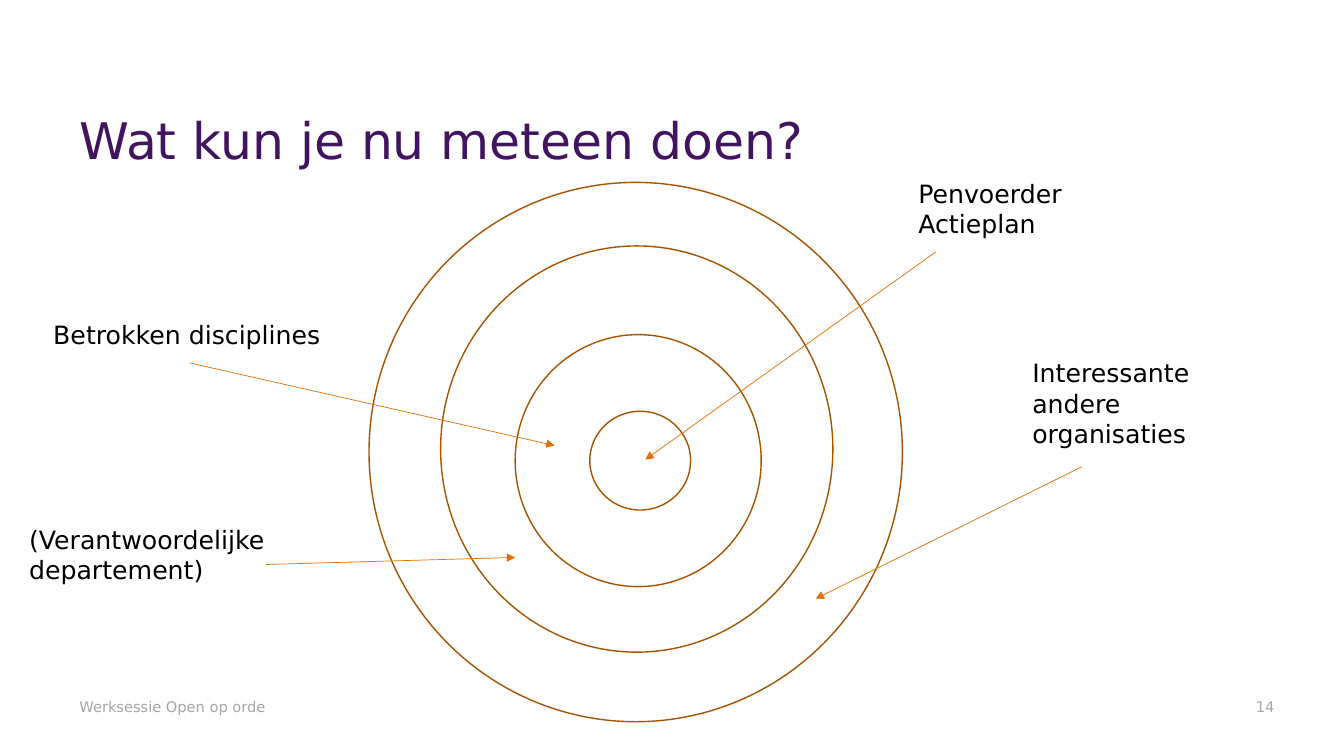
"""Build the slide with four circles of people and organisations to involve."""
from dataclasses import dataclass

from lxml import etree
from pptx import Presentation
from pptx.dml.color import RGBColor
from pptx.enum.shapes import MSO_CONNECTOR as Connector, MSO_SHAPE as Shape
from pptx.enum.text import MSO_ANCHOR as Anchor, PP_ALIGN as Align
from pptx.oxml.ns import qn
from pptx.util import Inches, Pt


@dataclass(frozen=True)
class Theme:
    font: str = "DejaVu Sans"
    title: RGBColor = RGBColor(0x42, 0x14, 0x5F)
    text: RGBColor = RGBColor(0, 0, 0)
    footer: RGBColor = RGBColor(0xA6, 0xA6, 0xA6)
    circle: RGBColor = RGBColor(0xA6, 0x53, 0x00)
    arrow: RGBColor = RGBColor(0xE1, 0x70, 0x00)
    title_size: float = 36
    label_size: float = 18
    footer_size: float = 10.5


theme = Theme()


def add_text(slide, box, text, size, color, anchor=Anchor.TOP):
    shape = slide.shapes.add_textbox(*map(Inches, box))
    frame = shape.text_frame
    frame.word_wrap = True
    frame.vertical_anchor = anchor
    run = frame.paragraphs[0].add_run()
    run.text = text
    run.font.name = theme.font
    run.font.size = Pt(size)
    run.font.color.rgb = color
    return frame


presentation = Presentation()
presentation.slide_width = Inches(13.33)
presentation.slide_height = Inches(7.5)
slide = presentation.slides.add_slide(presentation.slide_layouts[6])

title = add_text(slide, (0.69, 0.7, 11.95, 1.04), "Wat kun je nu meteen doen?",
                 theme.title_size, theme.title, Anchor.BOTTOM)
title.paragraphs[0].line_spacing = 0.9

add_text(slide, (0.69, 6.8, 5.47, 0.35), "Werksessie Open op orde",
         theme.footer_size, theme.footer, Anchor.BOTTOM)
number = add_text(slide, (7.17, 6.8, 5.47, 0.35), "14",
                  theme.footer_size, theme.footer, Anchor.BOTTOM)
number.margin_right = 0
number.paragraphs[0].alignment = Align.RIGHT

circles = [
    (3.66, 1.81, 5.29, 5.35),
    (4.37, 2.44, 3.89, 4.03),
    (5.11, 3.32, 2.44, 2.5),
    (5.85, 4.08, 1, 0.98),
]
for box in circles:
    circle = slide.shapes.add_shape(Shape.OVAL, *map(Inches, box))
    circle.shadow.inherit = False
    circle.fill.background()
    circle.line.color.rgb = theme.circle
    circle.line.width = Pt(1)

callouts = [
    ("Penvoerder Actieplan", (9.01, 1.72, 2.47, 0.71), (9.28, 2.5, 6.4, 4.56)),
    ("Betrokken disciplines", (0.43, 3.12, 2.9, 0.4), (1.88, 3.6, 5.5, 4.42)),
    ("(Verantwoordelijke departement)", (0.19, 5.15, 2.79, 0.71), (2.64, 5.6, 5.11, 5.53)),
    ("Interessante andere organisaties", (10.14, 3.5, 2.47, 1.01), (10.73, 4.63, 8.09, 5.94)),
]
for label, box, ends in callouts:
    add_text(slide, box, label, theme.label_size, theme.text)
    arrow = slide.shapes.add_connector(Connector.STRAIGHT, *map(Inches, ends))
    arrow.line.color.rgb = theme.arrow
    arrow.line.width = Pt(0.5)
    etree.SubElement(arrow.line._get_or_add_ln(), qn("a:tailEnd"), type="triangle")
    etree.SubElement(arrow._element.spPr, qn("a:effectLst"))

presentation.save("out.pptx")
